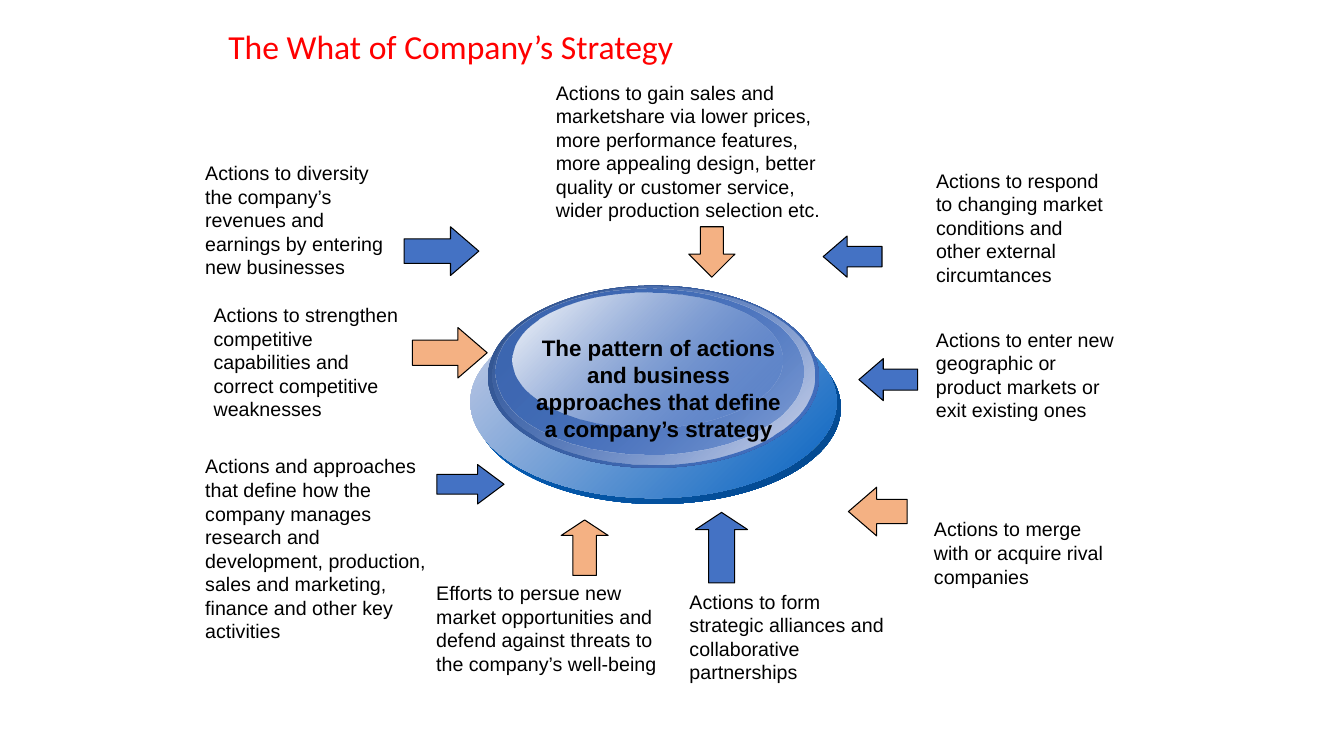
from lxml.etree import SubElement
from pptx import Presentation
from pptx.dml.color import RGBColor
from pptx.enum.shapes import MSO_SHAPE
from pptx.enum.text import MSO_ANCHOR, PP_ALIGN
from pptx.oxml.ns import qn
from pptx.util import Inches, Pt

COLUMNS, ROWS = 160, 90
BLUE, ORANGE, BLACK, RED = "4472C4", "F4B183", "000000", "FF0000"
RIGHT, LEFT = MSO_SHAPE.RIGHT_ARROW, MSO_SHAPE.LEFT_ARROW
UP, DOWN = MSO_SHAPE.UP_ARROW, MSO_SHAPE.DOWN_ARROW


def color(value):
    return RGBColor.from_string(value)


class StrategySlide:
    font = "Arial"
    action_size = 14
    line_rows = 2.82
    padding_rows = 1.2

    def __init__(self, deck):
        self.column = deck.slide_width / COLUMNS
        self.row = deck.slide_height / ROWS
        self.slide = deck.slides.add_slide(deck.slide_layouts[6])

    def place(self, left, top, width, height):
        return (round(left * self.column), round(top * self.row),
                round(width * self.column), round(height * self.row))

    def text(self, words, cell, size, ink=BLACK, font=None, bold=False,
             align=PP_ALIGN.LEFT, anchor=MSO_ANCHOR.TOP, spacing=None):
        frame = self.slide.shapes.add_textbox(*self.place(*cell)).text_frame
        frame.word_wrap = True
        frame.vertical_anchor = anchor
        paragraph = frame.paragraphs[0]
        paragraph.text = words
        paragraph.alignment = align
        paragraph.line_spacing = spacing
        paragraph.font.name = font or self.font
        paragraph.font.size = Pt(size)
        paragraph.font.bold = bold
        paragraph.font.color.rgb = color(ink)

    def action(self, words, left, top, width, lines):
        height = lines * self.line_rows + self.padding_rows
        self.text(words, (left, top, width, height), self.action_size)

    def arrow(self, direction, fill, head, cell):
        arrow = self.slide.shapes.add_shape(direction, *self.place(*cell))
        arrow.shadow.inherit = False
        arrow.adjustments[1] = head
        arrow.fill.solid()
        arrow.fill.fore_color.rgb = color(fill)
        arrow.line.color.rgb = color(BLACK)
        arrow.line.width = Pt(0.75)

    def button(self, layers):
        group = self.slide.shapes.add_group_shape()
        for cell, *stops in layers:
            disc = group.shapes.add_shape(MSO_SHAPE.OVAL, *self.place(*cell))
            disc.shadow.inherit = False
            disc.line.fill.background()
            disc.fill.gradient()
            disc.fill.gradient_angle = 315
            for stop, position, (tone, opacity) in zip(disc.fill.gradient_stops, (0, 1), stops):
                stop.position = position
                stop.color.rgb = color(tone)
            tones = disc.fill._xPr.iter(qn("a:srgbClr"))
            for element, (tone, opacity) in zip(tones, stops):
                if opacity < 100:
                    SubElement(element, qn("a:alpha"), val=str(opacity * 1000))


BUTTON_LAYERS = [
    ((56.5, 37.1, 43.6, 22.9), ("0563C1", 100), ("04488D", 100)),
    ((56, 36.4, 43.6, 22.9), ("C6CDE6", 100), ("0563C1", 100)),
    ((58.1, 34, 39.4, 21.7), ("31528C", 100), (BLUE, 100)),
    ((58.6, 34.1, 38.4, 21.2), (BLUE, 0), ("D6DBED", 100)),
    ((59, 34.3, 36.6, 19.8), ("3D67B1", 100), (BLUE, 48)),
    ((61, 34.8, 32.2, 16.1), ("FFFFFF", 100), (BLUE, 38)),
]

ACTIONS = [
    ("Actions to gain sales and marketshare via lower prices, more performance features, "
     "more appealing design, better quality or customer service, "
     "wider production selection etc.", 65, 9, 35, 6),
    ("Actions to respond to changing market conditions and other external circumtances",
     110.25, 19.5, 23, 5),
    ("Actions to enter new geographic or product markets or exit existing ones",
     110.25, 38.4, 25, 4),
    ("Actions to merge with or acquire rival companies", 110, 61, 23, 3),
    ("Actions to form strategic alliances and collaborative partnerships",
     80.9, 69.6, 27, 4),
    ("Efforts to persue new market opportunities and defend against threats to "
     "the company’s well-being", 50.75, 68.6, 28.8, 4),
    ("Actions and approaches that define how the company manages research and "
     "development, production, sales and marketing, finance and other key activities",
     23.25, 53.5, 29, 8),
    ("Actions to strengthen competitive capabilities and correct competitive weaknesses",
     24.25, 35.5, 26, 5),
    ("Actions to diversity the company’s revenues and earnings by entering new businesses",
     23.25, 18.6, 25, 5),
]

ARROWS = [
    (RIGHT, ORANGE, 0.58, (49.1, 39, 8.9, 6)),
    (LEFT, BLUE, 0.58, (102.25, 42.7, 7, 5)),
    (RIGHT, BLUE, 0.67, (52, 55.3, 8, 4.7)),
    (RIGHT, BLUE, 0.58, (48.1, 27, 8.9, 5.8)),
    (LEFT, ORANGE, 0.58, (101, 58, 7, 5.8)),
    (LEFT, BLUE, 0.58, (98, 28.1, 7, 4.9)),
    (DOWN, ORANGE, 0.5, (82, 27, 5.5, 6)),
    (UP, ORANGE, 0.33, (66.8, 61.9, 5.6, 6.6)),
    (UP, BLUE, 0.33, (82.8, 61, 6.2, 8.4)),
]


def main():
    deck = Presentation()
    deck.slide_width, deck.slide_height = Inches(13.33), Inches(7.5)
    strategy = StrategySlide(deck)
    strategy.text("The What of Company’s Strategy", (26, 3.6, 108, 4.4), 24, RED,
                  font="Calibri", anchor=MSO_ANCHOR.MIDDLE, spacing=0.9)
    strategy.button(BUTTON_LAYERS)
    strategy.text("The pattern of actions and business approaches that define "
                  "a company’s strategy", (61.9, 39.2, 33, 14), 16, bold=True,
                  align=PP_ALIGN.CENTER)
    for action in ACTIONS:
        strategy.action(*action)
    for arrow in ARROWS:
        strategy.arrow(*arrow)
    deck.save("out.pptx")


if __name__ == "__main__":
    main()
